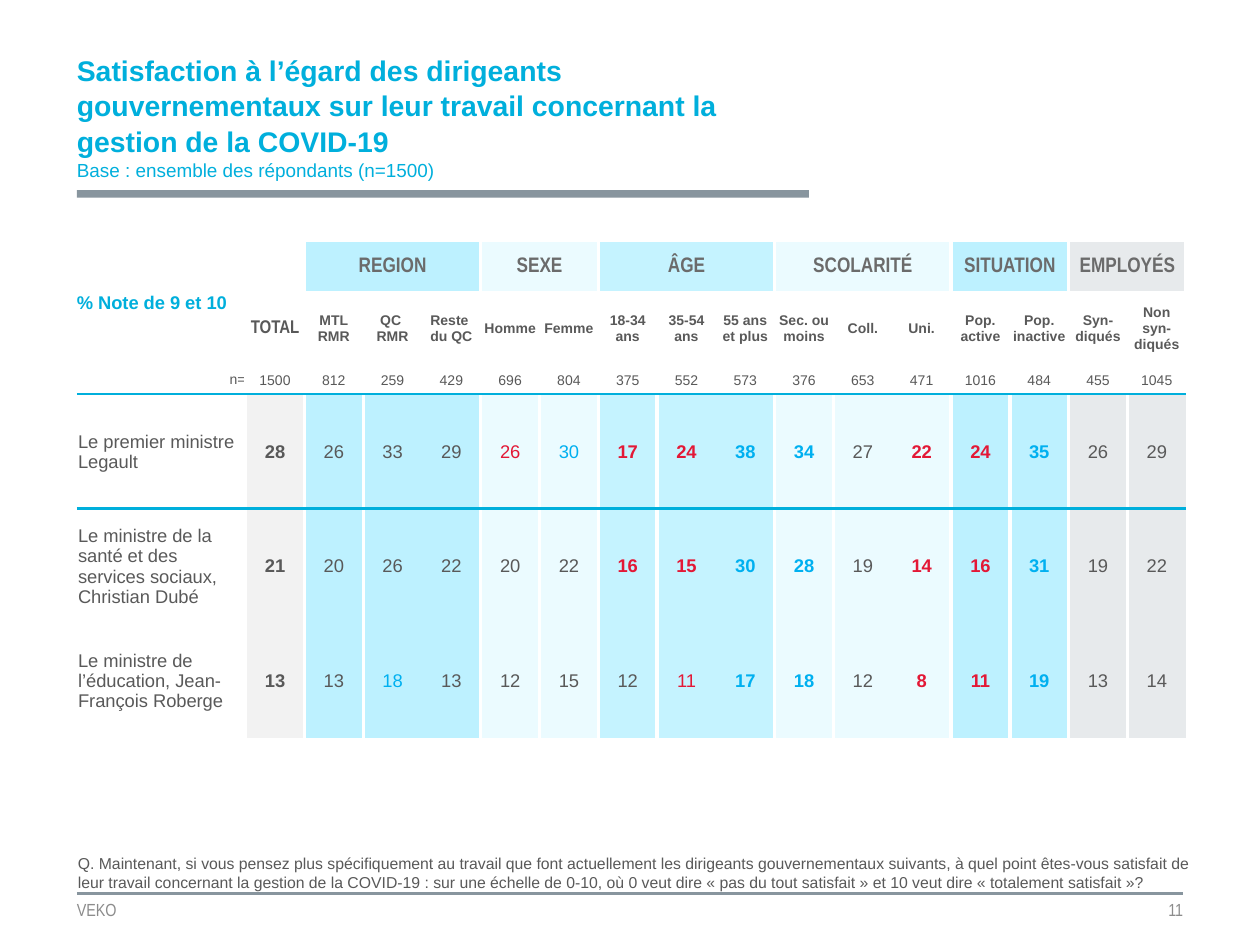
from dataclasses import dataclass

from lxml.etree import SubElement
from pptx import Presentation
from pptx.dml.color import RGBColor
from pptx.enum.shapes import MSO_CONNECTOR, MSO_SHAPE
from pptx.enum.text import MSO_ANCHOR, MSO_AUTO_SIZE, PP_ALIGN
from pptx.oxml.ns import qn
from pptx.util import Inches, Pt


@dataclass(frozen=True)
class Theme:
    font: str = "Arial"
    narrow: str = "Arial Narrow"
    accent: str = "00AFDC"
    rule: str = "88959E"
    text: str = "595959"
    heading: str = "6B6B6B"
    footer: str = "8C8C8C"
    low: str = "E31836"
    high: str = "00B0F0"
    white: str = "FFFFFF"
    title_size: float = 16.2
    base_size: float = 10.8
    group_size: float = 12
    body_size: float = 10.5
    column_size: float = 8
    question_size: float = 9
    footer_size: float = 10


@dataclass(frozen=True)
class Group:
    name: str
    fill: str
    columns: tuple[str, ...]


@dataclass(frozen=True)
class Leader:
    name: str
    scores: str


THEME = Theme()
NO_STYLE_NO_GRID = "{2D5ABB26-0587-4C30-8999-92F81FD0307C}"
LEFT, CONTENT_WIDTH = 0.61, 8.78
TABLE_WIDTH, LABEL_WIDTH = 8.81, 1.34
ROW_HEIGHTS = (0.39, 0.59, 0.19, 0.91, 0.91, 0.91)
TIGHT = (0.01, 0.01, 0.01, 0)
LABEL = (0, 0.05, 0, 0.05)

GROUPS = (
    Group("", "F2F2F2", ("TOTAL",)),
    Group("REGION", "BDF1FF", ("MTL\vRMR", "QC \vRMR", "Reste \vdu QC")),
    Group("SEXE", "EBFBFF", ("Homme", "Femme")),
    Group("ÂGE", "C5F3FF", ("18-34 ans", "35-54 ans", "55 ans et plus")),
    Group("SCOLARITÉ", "EBFBFF", ("Sec. ou moins", "Coll.", "Uni.")),
    Group("SITUATION", "BDF1FF", ("Pop. active", "Pop. inactive")),
    Group("EMPLOYÉS", "E7EAEC", ("Syn-diqués", "Non syn-diqués")),
)
SAMPLE_SIZES = "1500 812 259 429 696 804 375 552 573 376 653 471 1016 484 455 1045".split()
# A trailing - or + marks a low or high score; a doubled mark is bold.
LEADERS = (
    Leader("Le premier ministre Legault",
           "28 26 33 29 26- 30+ 17-- 24-- 38++ 34++ 27 22-- 24-- 35++ 26 29"),
    Leader("Le ministre de la santé et des services sociaux, Christian Dubé",
           "21 20 26 22 20 22 16-- 15-- 30++ 28++ 19 14-- 16-- 31++ 19 22"),
    Leader("Le ministre de l’éducation, Jean-François Roberge",
           "13 13 18+ 13 12 15 12 11- 17++ 18++ 12 8-- 11-- 19++ 13 14"),
)
QUESTION = (
    "Q. Maintenant, si vous pensez plus spécifiquement au travail que font actuellement "
    "les dirigeants gouvernementaux suivants, à quel point êtes-vous satisfait de leur "
    "travail concernant la gestion de la COVID-19 : sur une échelle de 0-10, où 0 veut dire "
    "« pas du tout satisfait » et 10 veut dire « totalement satisfait »?"
)


def style_font(font, size: float, color: str, bold: bool = False, name: str = THEME.font) -> None:
    font.name, font.size, font.bold = name, Pt(size), bold
    font.color.rgb = RGBColor.from_string(color)


def set_margins(target, margins: tuple[float, ...]) -> None:
    (target.margin_left, target.margin_top,
     target.margin_right, target.margin_bottom) = map(Inches, margins)


def write_cell(cell, text: str, size: float, color: str = THEME.text, bold: bool = False,
               name: str = THEME.font, align=PP_ALIGN.CENTER, margins=TIGHT) -> None:
    cell.text = text
    cell.vertical_anchor = MSO_ANCHOR.MIDDLE
    set_margins(cell, margins)
    paragraph = cell.text_frame.paragraphs[0]
    paragraph.alignment = align
    style_font(paragraph.font, size, color, bold, name)
    if margins == LABEL:
        paragraph.line_spacing = 0.95


def add_border(cell, side: str, color: str, width: float) -> None:
    """Add borders in the order L, R, T, B and before the cell's fill."""
    line = SubElement(cell._tc.get_or_add_tcPr(), qn(f"a:ln{side}"), w=str(Pt(width)))
    SubElement(SubElement(line, qn("a:solidFill")), qn("a:srgbClr"), val=color)


def finish_cell(cell, row: int, edges: str, fill: str | None) -> None:
    """Separate column groups in white and underline the sample sizes."""
    for side in edges:
        add_border(cell, side, THEME.white, 2.25)
    if row == 3:
        add_border(cell, "T", THEME.accent, 1.5)
    if row == 2:
        add_border(cell, "B", THEME.accent, 1.5)
    if fill:
        cell.fill.solid()
        cell.fill.fore_color.rgb = RGBColor.from_string(fill)
    else:
        cell.fill.background()


def write_score(cell, score: str, is_total: bool) -> None:
    color = THEME.low if "-" in score else THEME.high if "+" in score else THEME.text
    bold = is_total or score.endswith(("--", "++"))
    write_cell(cell, score.rstrip("+-"), THEME.body_size, color, bold)


def fill_labels(table) -> None:
    table.cell(0, 0).merge(table.cell(1, 0))
    write_cell(table.cell(0, 0), "% Note de 9 et 10", THEME.body_size, THEME.accent, True,
               align=PP_ALIGN.LEFT, margins=LABEL)
    write_cell(table.cell(1, 0), "", THEME.column_size)
    write_cell(table.cell(2, 0), "n=", THEME.column_size, align=PP_ALIGN.RIGHT, margins=LABEL)
    for row, leader in enumerate(LEADERS, 3):
        write_cell(table.cell(row, 0), leader.name, THEME.body_size, align=PP_ALIGN.LEFT)
    for row in range(len(ROW_HEIGHTS)):
        finish_cell(table.cell(row, 0), row, "R", None)


def fill_group(table, group: Group, first: int) -> None:
    last = first + len(group.columns) - 1
    is_total = not group.name
    for column, heading in enumerate(group.columns, first):
        write_cell(table.cell(0, column), group.name if column == first else "",
                   THEME.group_size, THEME.heading, True, THEME.narrow)
        write_cell(table.cell(1, column), heading,
                   THEME.body_size if is_total else THEME.column_size,
                   bold=True, name=THEME.narrow if is_total else THEME.font)
        write_cell(table.cell(2, column), SAMPLE_SIZES[column - 1], THEME.column_size)
        for row, leader in enumerate(LEADERS, 3):
            write_score(table.cell(row, column), leader.scores.split()[column - 1], is_total)
        inner_edges = ("L" if column == first else "") + (
            "R" if column == last and last < len(SAMPLE_SIZES) else "")
        for row in range(len(ROW_HEIGHTS)):
            filled = row > 2 or (row == 0 and not is_total)
            finish_cell(table.cell(row, column), row, "LR" if row == 0 else inner_edges,
                        group.fill if filled else None)
    if last > first:
        table.cell(0, first).merge(table.cell(0, last))


def add_scores(slide) -> None:
    table = slide.shapes.add_table(
        len(ROW_HEIGHTS), len(SAMPLE_SIZES) + 1, Inches(LEFT), Inches(1.92),
        Inches(TABLE_WIDTH), Inches(sum(ROW_HEIGHTS))).table
    table.first_row = table.horz_banding = False
    table._tbl.tblPr.find(qn("a:tableStyleId")).text = NO_STYLE_NO_GRID
    for row, height in zip(table.rows, ROW_HEIGHTS):
        row.height = Inches(height)
    score_width = (TABLE_WIDTH - LABEL_WIDTH) / len(SAMPLE_SIZES)
    for index, column in enumerate(table.columns):
        column.width = Inches(score_width if index else LABEL_WIDTH)
    fill_labels(table)
    first = 1
    for group in GROUPS:
        fill_group(table, group, first)
        first += len(group.columns)


def add_title(slide) -> None:
    title = slide.shapes.title
    title.left, title.top, title.width, title.height = map(Inches, (LEFT, 0.41, 5.81, 1.1))
    frame = title.text_frame
    frame.auto_size, frame.word_wrap = MSO_AUTO_SIZE.NONE, True
    frame.vertical_anchor = MSO_ANCHOR.TOP
    set_margins(frame, (0, 0, 0, 0))
    paragraph = frame.paragraphs[0]
    paragraph.alignment, paragraph.line_spacing = PP_ALIGN.LEFT, 1.04
    subject = paragraph.add_run()
    subject.text = ("Satisfaction à l’égard des dirigeants gouvernementaux sur leur travail "
                    "concernant la gestion de la COVID-19")
    style_font(subject.font, THEME.title_size, THEME.accent, True)
    paragraph.add_line_break()
    base = paragraph.add_run()
    base.text = "Base : ensemble des répondants (n=1500)"
    style_font(base.font, THEME.base_size, THEME.accent)


def add_rules(slide) -> None:
    title_rule = slide.shapes.add_shape(
        MSO_SHAPE.RECTANGLE, Inches(LEFT), Inches(1.51), Inches(5.81), Inches(0.06))
    title_rule.shadow.inherit = False
    title_rule.fill.solid()
    title_rule.fill.fore_color.rgb = RGBColor.from_string(THEME.rule)
    title_rule.line.fill.background()
    footer_rule = slide.shapes.add_connector(
        MSO_CONNECTOR.STRAIGHT, Inches(LEFT), Inches(7.09),
        Inches(LEFT + CONTENT_WIDTH), Inches(7.09))
    footer_rule.line.color.rgb = RGBColor.from_string(THEME.rule)
    footer_rule.line.width = Pt(1.5)
    SubElement(footer_rule._element.spPr, qn("a:effectLst"))


def add_text(slide, text: str, box: tuple[float, ...], size: float, color: str,
             name: str = THEME.font, align=PP_ALIGN.LEFT):
    frame = slide.shapes.add_textbox(*map(Inches, box)).text_frame
    frame.word_wrap = True
    frame.text = text
    frame.paragraphs[0].alignment = align
    style_font(frame.paragraphs[0].font, size, color, name=name)
    return frame


def main() -> None:
    deck = Presentation()
    deck.slide_width, deck.slide_height = Inches(10), Inches(7.5)
    slide = deck.slides.add_slide(deck.slide_layouts[5])
    add_rules(slide)
    for text, left, width, align in (("VEKO", LEFT, 2.8, PP_ALIGN.LEFT),
                                     ("11", 6.55, 2.84, PP_ALIGN.RIGHT)):
        footer = add_text(slide, text, (left, 7.09, width, 0.26), THEME.footer_size,
                          THEME.footer, THEME.narrow, align)
        set_margins(footer, (0, 0, 0, 0))
        footer.vertical_anchor = MSO_ANCHOR.MIDDLE
    add_title(slide)
    add_scores(slide)
    add_text(slide, QUESTION, (0.52, 6.73, 9.07, 0.4), THEME.question_size, THEME.text)
    deck.save("out.pptx")


if __name__ == "__main__":
    main()
